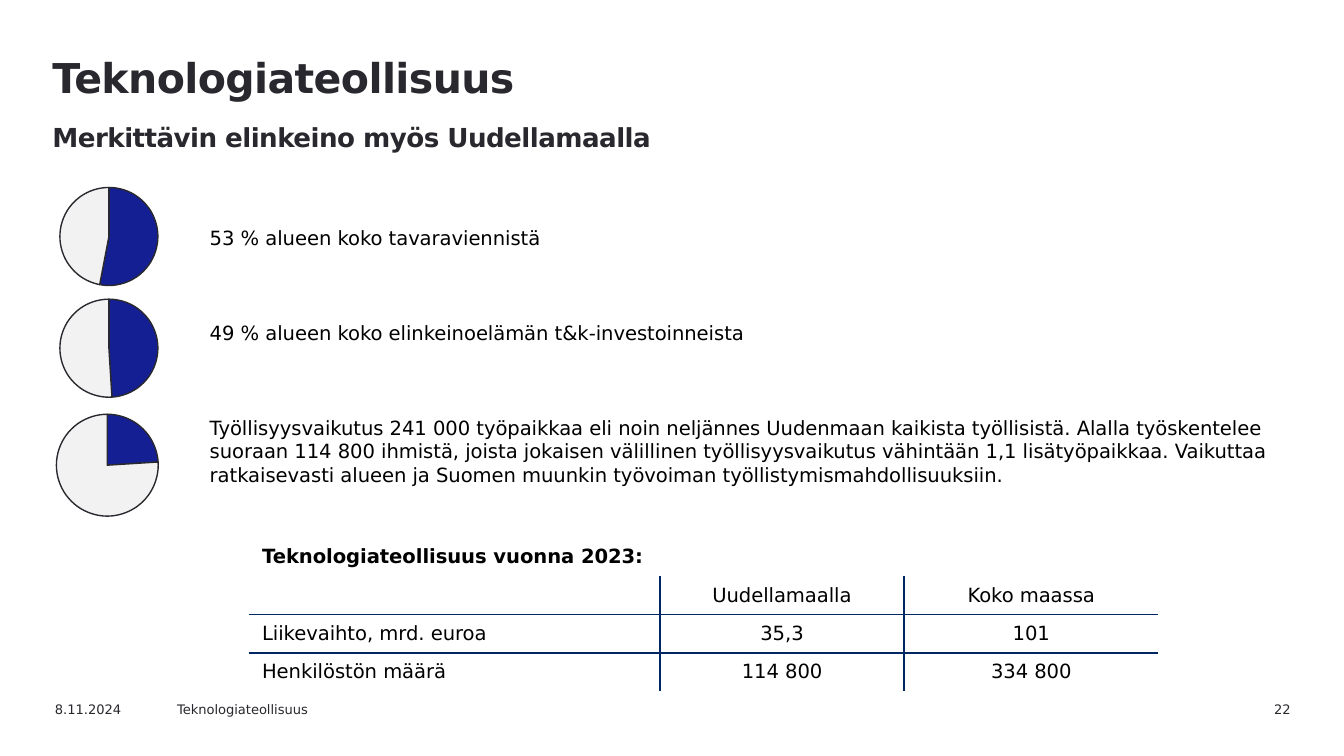
from lxml import etree
from pptx import Presentation
from pptx.chart.data import CategoryChartData
from pptx.dml.color import RGBColor
from pptx.enum import chart as ch, text as tx
from pptx.oxml import parse_xml
from pptx.oxml.ns import nsdecls, qn
from pptx.util import Cm, Pt

INK = RGBColor(0x29, 0x28, 0x2E)
BLACK = RGBColor(0, 0, 0)
BLUE = RGBColor(0x14, 0x1F, 0x94)
GREY = RGBColor(0xF2, 0xF2, 0xF2)
NAVY = RGBColor(0x00, 0x26, 0x64)
FACE = "DejaVu Sans"
LEFT, MID, RIGHT = tx.PP_ALIGN.LEFT, tx.PP_ALIGN.CENTER, tx.PP_ALIGN.RIGHT

HEAD = {"size": Pt(22), "bold": True}
SUB = {"size": Pt(14), "bold": True}
BODY = {"size": Pt(10.5), "bold": False, "color": BLACK}
FOOT = {"size": Pt(7)}

FACTS = [
    "53 % alueen koko tavaraviennistä",
    "49 % alueen koko elinkeinoelämän t&k-investoinneista",
    "Työllisyysvaikutus 241 000 työpaikkaa eli noin neljännes Uudenmaan "
    "kaikista työllisistä. Alalla työskentelee suoraan 114 800 ihmistä, "
    "joista jokaisen välillinen työllisyysvaikutus vähintään 1,1 "
    "lisätyöpaikkaa. Vaikuttaa ratkaisevasti alueen ja Suomen muunkin "
    "työvoiman työllistymismahdollisuuksiin.",
]
PIES = [  # share, left, top, size
    (53, 0.79, 3.2, 2.54),
    (49, 0.79, 5.31, 2.54),
    (24, 0.71, 7.47, 2.64),
]
ROWS = [
    ["Teknologiateollisuus vuonna 2023:", "", ""],
    ["", "Uudellamaalla", "Koko maassa"],
    ["Liikevaihto, mrd. euroa", "35,3", "101"],
    ["Henkilöstön määrä", "114 800", "334 800"],
]
FEET = [  # text, left, width, alignment
    ("8.11.2024", 0.79, 2.54, LEFT),
    ("Teknologiateollisuus", 3.1, 3.6, LEFT),
    ("22", 22.25, 2.39, RIGHT),
]


def style(font, form):
    font.color.rgb = form.get("color", INK)
    for key, val in {"name": FACE, **form}.items():
        if key != "color":
            setattr(font, key, val)


def place(shape, *box):
    for key, val in zip(("left", "top", "width", "height"), box):
        setattr(shape, key, Cm(val))


def add_title(slide):
    shape = slide.shapes.title
    place(shape, 0.71, 0.79, 22.2, 1.8)
    frame = shape.text_frame
    frame.vertical_anchor = tx.MSO_ANCHOR.TOP
    frame.margin_left, frame.margin_top = Cm(0.28), Cm(0.18)
    para = frame.paragraphs[0]
    para.alignment, para.line_spacing = LEFT, Pt(27)
    for i, (line, form) in enumerate([
            ("Teknologiateollisuus", HEAD),
            ("Merkittävin elinkeino myös Uudellamaalla", SUB)]):
        if i:
            para.add_line_break()
        run = para.add_run()
        run.text = line
        style(run.font, form)
        run.font._element.set("spc", "-30")


def add_facts(slide):
    shape = slide.placeholders[1]
    place(shape, 3.71, 4.14, 20.8, 6.15)
    frame = shape.text_frame
    for i, fact in enumerate(FACTS):
        para = frame.add_paragraph() if i else frame.paragraphs[0]
        para.text = fact
        para.space_before = Pt(38.2 if i else 0)
        props = para._p.get_or_add_pPr()
        props.set("marL", "0")
        props.set("indent", "0")
        etree.SubElement(props, qn("a:buNone"))
        style(para.font, BODY)


def add_pie(slide, share, left, top, size):
    data = CategoryChartData()
    data.categories = ["1", "2"]
    data.add_series("Series 1", (share, 100 - share))
    chart = slide.shapes.add_chart(
        ch.XL_CHART_TYPE.PIE, Cm(left), Cm(top), Cm(size), Cm(size), data).chart
    chart.has_legend = chart.has_title = False
    style(chart.font, {"size": Pt(18)})
    plot = chart.plots[0]
    plot.vary_by_categories = False
    for i, hue in enumerate((BLUE, GREY)):
        form = plot.series[0].points[i].format
        form.fill.solid()
        form.fill.fore_color.rgb = hue
        form.line.color.rgb = INK
        form.line.width = Pt(0.75)
    inset(chart, 0.135)


def inset(chart, gap):
    """Keep the same empty margin, a share of the chart, on all four sides."""
    area = chart._chartSpace.chart.plotArea
    for old in area.findall(qn("c:layout")):
        area.remove(old)
    vals = {"x": gap, "y": gap, "w": 1 - 2 * gap, "h": 1 - 2 * gap}
    parts = "".join(f'<c:{k} val="{v:.3f}"/>' for k, v in vals.items())
    area.insert(0, parse_xml(
        f'<c:layout {nsdecls("c")}><c:manualLayout>'
        '<c:layoutTarget val="inner"/><c:xMode val="edge"/>'
        f'<c:yMode val="edge"/>{parts}</c:manualLayout></c:layout>'))


def rule(cell, sides):
    """Draw the given sides (out of LRTB) and clear the others."""
    props = cell._tc.get_or_add_tcPr()
    for side in "LRTB":
        fill = (f'<a:solidFill><a:srgbClr val="{NAVY}"/></a:solidFill>'
                if side in sides else "<a:noFill/>")
        props.append(parse_xml(
            f'<a:ln{side} {nsdecls("a")} w="12700">{fill}</a:ln{side}>'))


def add_grid(slide):
    last, end = len(ROWS) - 1, len(ROWS[0]) - 1
    table = slide.shapes.add_table(
        last + 1, end + 1, Cm(4.7), Cm(10.16), Cm(17.19), Cm(2.9)).table
    table.first_row = table.horz_banding = False
    for col, width in zip(table.columns, (7.77, 4.62, 4.8)):
        col.width = Cm(width)
    for r, row in enumerate(ROWS):
        for c, words in enumerate(row):
            cell = table.cell(r, c)
            sides = ""
            if r:
                sides = ("L" * (c > 0) + "R" * (c < end)
                         + "T" * (r > 1) + "B" * (r < last))
            rule(cell, sides)
            cell.fill.background()
            cell.vertical_anchor = tx.MSO_ANCHOR.MIDDLE
            para = cell.text_frame.paragraphs[0]
            para.text = words
            para.alignment = MID if c else LEFT
            style(para.font, {**BODY, "bold": r == 0})
    table.cell(0, 0).merge(table.cell(0, end))


def add_foot(slide, words, left, width, side):
    box = slide.shapes.add_textbox(Cm(left), Cm(13.13), Cm(width), Cm(0.46))
    box.text_frame.word_wrap = True
    para = box.text_frame.paragraphs[0]
    para.text, para.alignment = words, side
    style(para.font, FOOT)


def main():
    deck = Presentation()
    deck.slide_width, deck.slide_height = Cm(25.4), Cm(14.28)
    slide = deck.slides.add_slide(deck.slide_layouts[1])
    add_title(slide)
    for foot in FEET:
        add_foot(slide, *foot)
    add_facts(slide)
    for pie in PIES:
        add_pie(slide, *pie)
    add_grid(slide)
    deck.save("out.pptx")


if __name__ == "__main__":
    main()
